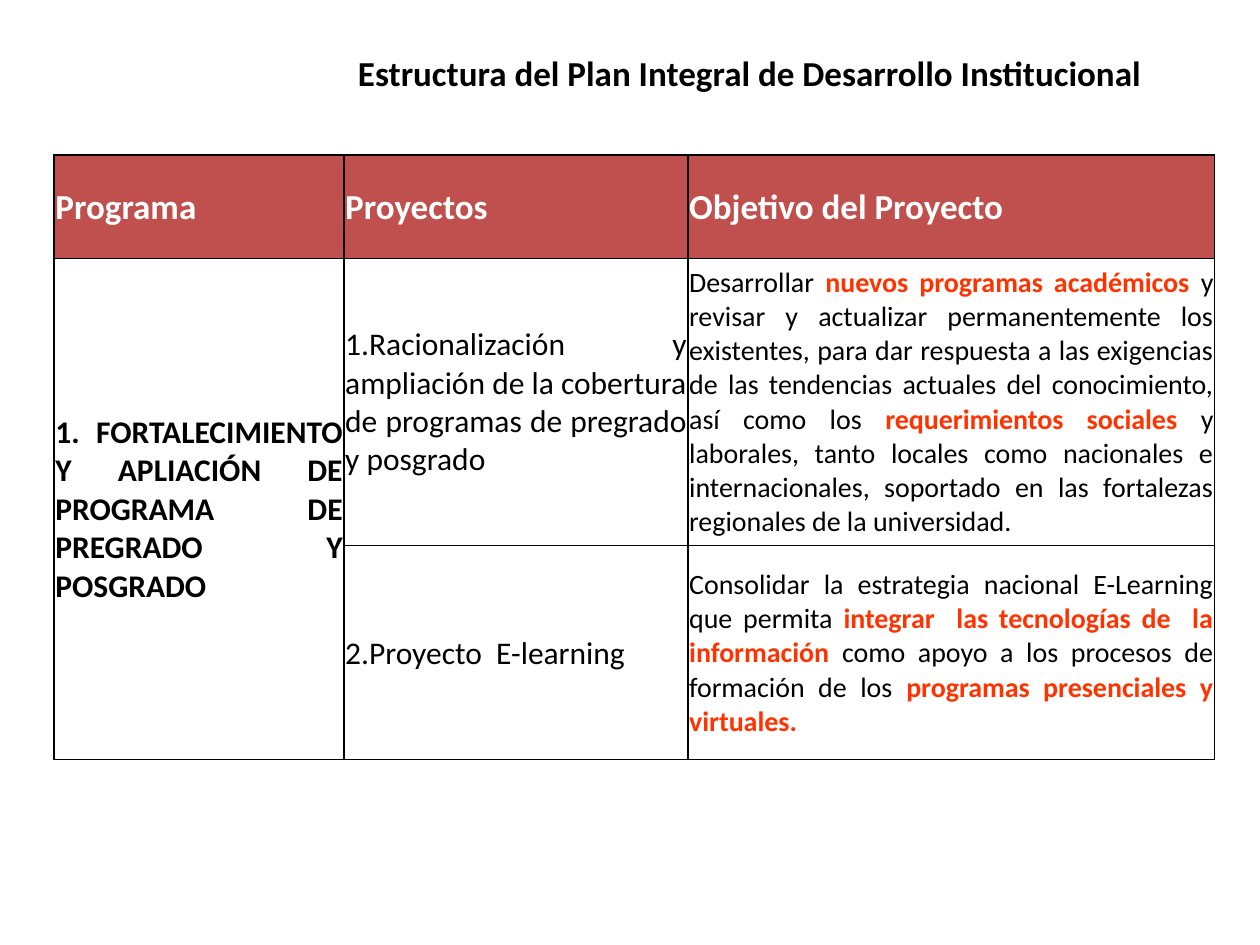
from typing import NamedTuple

from lxml import etree
from pptx import Presentation
from pptx.dml.color import RGBColor
from pptx.enum import text as t
from pptx.oxml import ns
from pptx.util import Pt

HUES = {"ink": "000000", "head": "C0504D", "white": "FFFFFF", "key": "FF3300"}
FONT = "Calibri"
COLS = (165.6, 196.56, 300.96)
ROWS = (59.04, 164.16, 122.4)


class Run(NamedTuple):
    words: str
    size: float
    hue: str = "ink"
    bold: bool = False


class Cell(NamedTuple):
    row: int
    col: int
    runs: list[Run]
    fill: str = "white"


def head(col: int, words: str) -> Cell:
    return Cell(0, col, [Run(words, 20, "white", True)], "head")


def plain(words: str) -> Run:
    return Run(words, 16)


def key(words: str) -> Run:
    return Run(words, 16, "key", True)


CELLS = [
    head(0, "Programa"),
    head(1, "Proyectos"),
    head(2, "Objetivo del Proyecto"),
    Cell(1, 0, [Run("1. FORTALECIMIENTO Y APLIACIÓN DE PROGRAMA DE "
                    "PREGRADO Y POSGRADO", 18, bold=True)]),
    Cell(1, 1, [Run("1.Racionalización y ampliación de la cobertura de "
                    "programas de pregrado y posgrado", 18)]),
    Cell(1, 2, [
        plain("Desarrollar "),
        key("nuevos programas académicos "),
        plain("y revisar y actualizar permanentemente los existentes, para dar "
              "respuesta a las exigencias de las tendencias actuales del "
              "conocimiento, así como los "),
        key("requerimientos sociales "),
        plain("y laborales, tanto locales como nacionales e internacionales, "
              "soportado en las fortalezas regionales de la universidad."),
    ]),
    Cell(2, 1, [Run("2.Proyecto  E-learning", 18)]),
    Cell(2, 2, [
        plain("Consolidar la estrategia nacional E-Learning que permita "),
        key("integrar  las tecnologías de  la información "),
        plain("como apoyo a los procesos de formación de los "),
        key("programas presenciales y virtuales."),
    ]),
]


def write(frame, runs: list[Run], align) -> None:
    """Add the runs to the first paragraph of a text frame."""
    para = frame.paragraphs[0]
    para.alignment = align
    for item in runs:
        run = para.add_run()
        run.text = item.words
        font = run.font
        font.name, font.size, font.bold = FONT, Pt(item.size), item.bold
        font.color.rgb = RGBColor.from_string(HUES[item.hue])


def rule(cell) -> None:
    """Draw a thin line on all four sides of a cell."""
    props = cell._tc.get_or_add_tcPr()
    for side in ("lnL", "lnR", "lnT", "lnB"):
        line = etree.SubElement(props, ns.qn(f"a:{side}"), w=str(Pt(1)))
        fill = etree.SubElement(line, ns.qn("a:solidFill"))
        etree.SubElement(fill, ns.qn("a:srgbClr"), val=HUES["ink"])


def draw_title(slide) -> None:
    title = slide.shapes.title
    title.left, title.top = Pt(156.24), Pt(25.92)
    title.width, title.height = Pt(544.32), Pt(41.76)
    frame = title.text_frame
    frame.word_wrap = True
    frame.auto_size = t.MSO_AUTO_SIZE.NONE
    frame.vertical_anchor = t.MSO_ANCHOR.TOP
    words = "Estructura del Plan Integral de Desarrollo Institucional"
    write(frame, [Run(words, 20, bold=True)], t.PP_ALIGN.CENTER)


def draw_table(slide) -> None:
    table = slide.shapes.add_table(
        len(ROWS), len(COLS), Pt(30.96), Pt(88.56),
        Pt(sum(COLS)), Pt(sum(ROWS))).table
    for col, width in zip(table.columns, COLS):
        col.width = Pt(width)
    for row, height in zip(table.rows, ROWS):
        row.height = Pt(height)

    # The programme spans both of its projects
    table.cell(1, 0).merge(table.cell(2, 0))
    for cell in (c for row in table.rows for c in row.cells):
        rule(cell)

    for item in CELLS:
        cell = table.cell(item.row, item.col)
        cell.fill.solid()
        cell.fill.fore_color.rgb = RGBColor.from_string(HUES[item.fill])
        cell.margin_left = cell.margin_right = cell.margin_top = Pt(0.72)
        cell.margin_bottom = Pt(0)
        cell.vertical_anchor = t.MSO_ANCHOR.MIDDLE
        write(cell.text_frame, item.runs, t.PP_ALIGN.JUSTIFY)


def main() -> None:
    deck = Presentation()
    deck.slide_width, deck.slide_height = Pt(720), Pt(540)
    slide = deck.slides.add_slide(deck.slide_layouts[5])
    draw_table(slide)
    draw_title(slide)
    deck.save("out.pptx")


if __name__ == "__main__":
    main()
